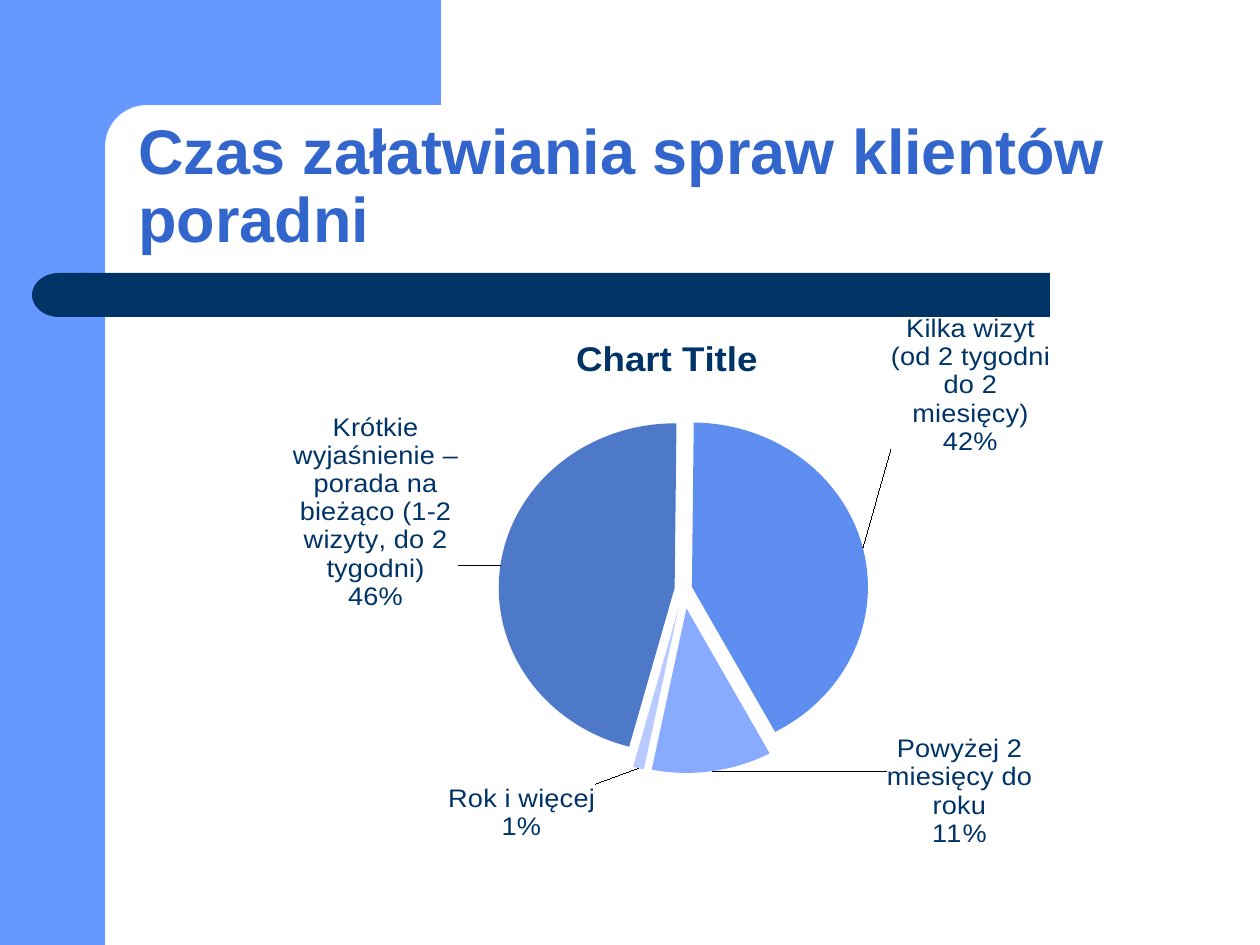
"""Build a slide with a pie chart of how long client cases take."""
from pptx import Presentation
from pptx.chart.data import CategoryChartData
from pptx.dml.color import RGBColor
from pptx.enum.chart import XL_CHART_TYPE, XL_LABEL_POSITION
from pptx.enum.shapes import MSO_SHAPE
from pptx.enum.text import MSO_ANCHOR
from pptx.oxml import parse_xml
from pptx.oxml.ns import nsdecls, qn
from pptx.util import Emu, Pt

BLUE = RGBColor(0x66, 0x99, 0xFF)
NAVY = RGBColor(0x00, 0x33, 0x66)
WHITE = RGBColor(0xFF, 0xFF, 0xFF)
TITLE_BLUE = RGBColor(0x33, 0x66, 0xCC)
FONT = "Arial"
TITLE = "Czas załatwiania spraw klientów poradni"
TITLE_BOX = (126, 104, 1102, 158)

# kind, box, fill, rotation
DECORATIONS = [
    (MSO_SHAPE.RECTANGLE, (0, 0, 105, 945), BLUE, 0),
    (MSO_SHAPE.RECTANGLE, (95, 0, 346, 147), BLUE, 0),
    (MSO_SHAPE.ROUNDED_RECTANGLE, (105, 105, 703, 84), WHITE, 0),
    (MSO_SHAPE.RECTANGLE, (84, 273, 966, 44), NAVY, 0),
    (MSO_SHAPE.FLOWCHART_DELAY, (32, 273, 54, 44), NAVY, 180),
]

CHART_TITLE = "Chart Title"
CHART_BOX = (233, 314, 868, 577)
PIE_BOX = (507, 432, 352, 352)
LABEL_SIZE = (157, 144)
START_ANGLE = 195
# category, value, fill, explosion, label offset
SLICES = [
    ("Krótkie wyjaśnienie – porada na bieżąco (1-2 wizyty, do 2 tygodni)", 46,
     RGBColor(0x4E, 0x78, 0xC8), 5, (-35, 49)),
    ("Kilka wizyt (od 2 tygodni do 2 miesięcy)", 42,
     RGBColor(0x5E, 0x8E, 0xF0), 5, (21, -103)),
    ("Powyżej 2 miesięcy do roku", 11,
     RGBColor(0x88, 0xAA, 0xFF), 12, (174, -47)),
    ("Rok i więcej", 1, RGBColor(0xB8, 0xCA, 0xFF), 12, (-42, 10)),
]


def px(*lengths):
    return [Emu(round(length * 914400 / 126)) for length in lengths]


def chart_xml(tag, content="", value=None):
    attribute = "" if value is None else f' val="{value}"'
    return parse_xml(f'<c:{tag} {nsdecls("c")}{attribute}>{content}</c:{tag}>')


def manual_layout(keys, lengths, modes=""):
    values = "".join(f'<c:{key} val="{length / whole:.3f}"/>'
                     for key, length, whole in zip(keys, lengths, CHART_BOX[2:] * 2))
    return f"<c:manualLayout>{modes}{values}</c:manualLayout>"


def write_text(frame, text, size, color, bold=False, spacing=None):
    paragraph = frame.paragraphs[0]
    paragraph.line_spacing = spacing
    run = paragraph.add_run()
    run.text = text
    run.font.name, run.font.size, run.font.bold = FONT, Pt(size), bold
    run.font.color.rgb = color


def add_decorations(slide):
    for kind, box, fill, rotation in DECORATIONS:
        shape = slide.shapes.add_shape(kind, *px(*box))
        shape.shadow.inherit = False
        shape.fill.solid()
        shape.fill.fore_color.rgb = fill
        shape.line.fill.background()
        shape.rotation = rotation
        if kind == MSO_SHAPE.ROUNDED_RECTANGLE:
            shape.adjustments[0] = 0.5


def add_title(slide):
    frame = slide.shapes.add_textbox(*px(*TITLE_BOX)).text_frame
    frame.word_wrap = True
    frame.vertical_anchor = MSO_ANCHOR.BOTTOM
    write_text(frame, TITLE, 36, TITLE_BLUE, bold=True, spacing=0.9)


def place_pie(chart):
    left, top, width, height = PIE_BOX
    modes = '<c:layoutTarget val="inner"/><c:xMode val="edge"/><c:yMode val="edge"/>'
    lengths = (left - CHART_BOX[0], top - CHART_BOX[1], width, height)
    plot_area = chart._chartSpace.chart.plotArea
    for layout in plot_area.findall(qn("c:layout")):
        plot_area.remove(layout)
    plot_area.insert(0, chart_xml("layout", manual_layout("xywh", lengths, modes)))
    pie = plot_area.find(qn("c:pieChart"))
    for angle in pie.findall(qn("c:firstSliceAng")):
        pie.remove(angle)
    pie.append(chart_xml("firstSliceAng", value=START_ANGLE))


def format_slices(series):
    for index, (_, _, fill, explosion, _) in enumerate(SLICES):
        slice_format = series.points[index].format
        slice_format.fill.solid()
        slice_format.fill.fore_color.rgb = fill
        slice_format.line.fill.background()
        properties = series._element.findall(qn("c:dPt"))[index].find(qn("c:spPr"))
        properties.addprevious(chart_xml("explosion", value=explosion))


def add_labels(series):
    labels = series.data_labels
    labels.font.name, labels.font.size = FONT, Pt(15.5)
    labels.font.color.rgb = NAVY
    labels.number_format, labels.number_format_is_linked = "0%", False
    labels.position = XL_LABEL_POSITION.OUTSIDE_END
    labels.show_value = False
    labels.show_category_name = labels.show_percentage = True
    element = labels._element
    flags = {"LegendKey": 0, "Val": 0, "CatName": 1, "SerName": 0, "Percent": 1, "BubbleSize": 0}
    shown = "".join(f'<c:show{key} val="{value}"/>' for key, value in flags.items())
    extension = ('<c:extLst><c:ext uri="{CE6537A1-D6FC-4f65-9D91-7224C49458BB}" '
                 'xmlns:c15="http://schemas.microsoft.com/office/drawing/2012/chart">'
                 f'<c15:layout>{manual_layout("wh", LABEL_SIZE)}</c15:layout></c:ext></c:extLst>')
    for index, (*_, offset) in enumerate(SLICES):
        element.insert(index, chart_xml(
            "dLbl", f'<c:idx val="{index}"/><c:layout>{manual_layout("xy", offset)}</c:layout>'
            f'<c:numFmt formatCode="0%" sourceLinked="0"/><c:dLblPos val="outEnd"/>'
            f'{shown}<c:separator>\n</c:separator>{extension}'))
    leader_lines = element.find(qn("c:showLeaderLines"))
    if leader_lines is not None:
        element.remove(leader_lines)
    element.append(chart_xml("separator", "\n"))
    element.append(chart_xml("showLeaderLines", value=1))


def add_pie(slide):
    data = CategoryChartData()
    data.categories = [name for name, *_ in SLICES]
    data.add_series("Series 1", [value for _, value, *_ in SLICES])
    chart = slide.shapes.add_chart(XL_CHART_TYPE.PIE, *px(*CHART_BOX), data).chart
    chart.font.name, chart.font.size = FONT, Pt(15.5)
    chart.font.color.rgb = NAVY
    chart.has_legend = False
    chart.has_title = True
    write_text(chart.chart_title.text_frame, CHART_TITLE, 21, NAVY, bold=True)
    plot = chart.plots[0]
    plot.vary_by_categories = True
    format_slices(plot.series[0])
    add_labels(plot.series[0])
    place_pie(chart)


def main():
    presentation = Presentation()
    presentation.slide_width, presentation.slide_height = px(1260, 945)
    slide = presentation.slides.add_slide(presentation.slide_layouts[6])
    add_decorations(slide)
    add_title(slide)
    add_pie(slide)
    presentation.save("out.pptx")


if __name__ == "__main__":
    main()
